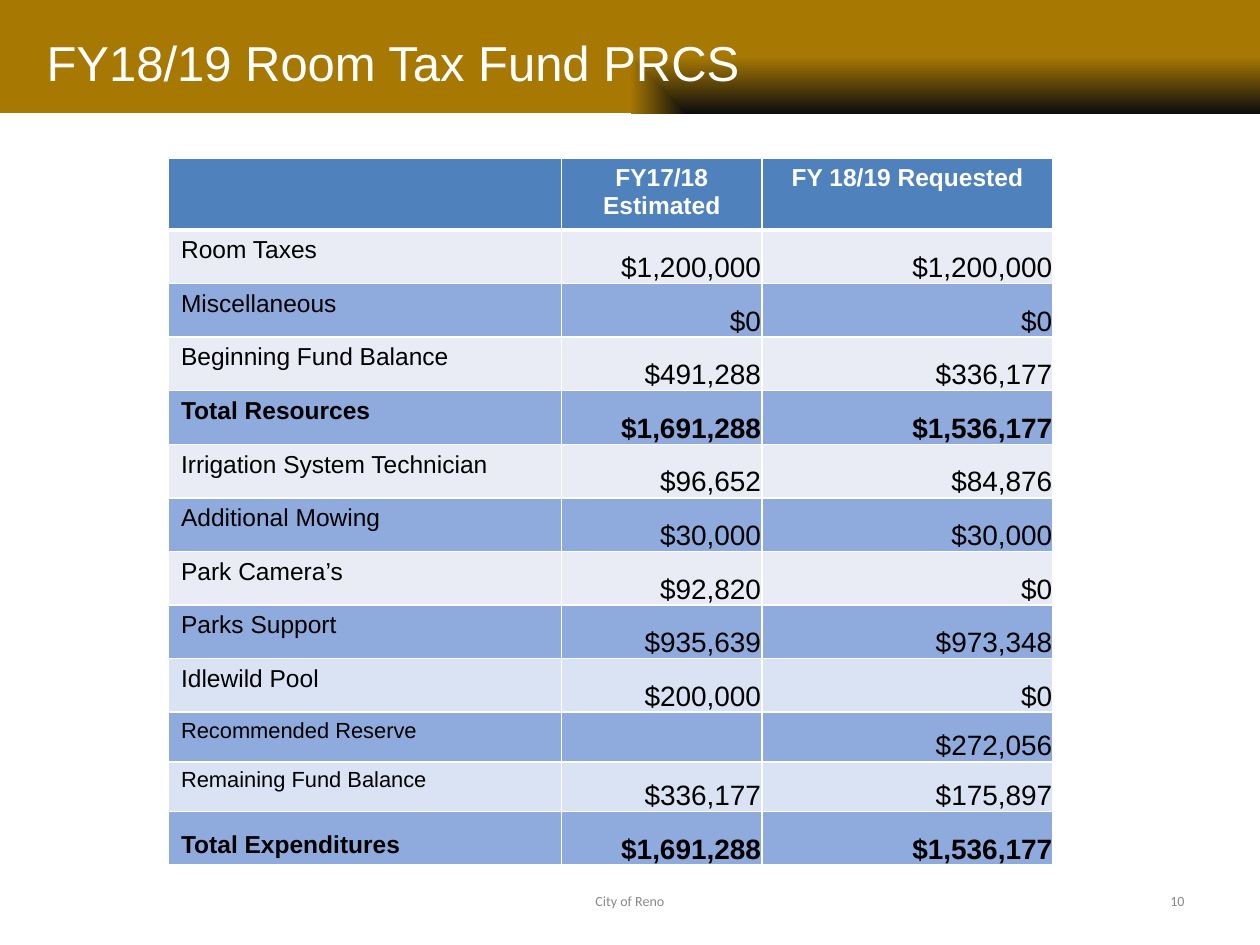
"""Build the room tax fund budget slide."""
from dataclasses import dataclass

from lxml import etree
from pptx import Presentation
from pptx import util as u
from pptx.dml.color import RGBColor
from pptx.enum import shapes, text
from pptx.oxml import parse_xml
from pptx.oxml.ns import nsdecls, qn

COLORS = {
    "white": "FFFFFF", "black": "000000", "grey": "898989",
    "gold": "A77903", "near_black": "0C0C0C", "header": "4F81BD",
    "pale": "E9ECF4", "blue": "8FAADC", "light": "DAE3F3",
}
HEADINGS = ("", "FY17/18 Estimated", "FY 18/19 Requested")
COLUMN_WIDTHS = (7.92, 4.04, 5.87)
HEADER_HEIGHT = 1.17
LABEL_MARGINS = (0.25, 0.13, 0.25, 0.13)
AMOUNT_MARGINS = (0.02, 0.02, 0.02, 0)


@dataclass
class BudgetRow:
    """One line of the budget table."""
    label: str
    estimated: str
    requested: str
    fill: str
    bold: bool = False
    size: float = 14
    height: float = 1.08
    anchor: text.MSO_ANCHOR = text.MSO_ANCHOR.TOP


BUDGET = (
    BudgetRow("Room Taxes", "$1,200,000", "$1,200,000", "pale"),
    BudgetRow("Miscellaneous", "$0", "$0", "blue"),
    BudgetRow("Beginning Fund Balance", "$491,288", "$336,177", "pale"),
    BudgetRow("Total Resources", "$1,691,288", "$1,536,177", "blue", bold=True),
    BudgetRow("Irrigation System Technician", "$96,652", "$84,876", "pale"),
    BudgetRow("Additional Mowing", "$30,000", "$30,000", "blue"),
    BudgetRow("Park Camera’s", "$92,820", "$0", "pale"),
    BudgetRow("Parks Support", "$935,639", "$973,348", "blue"),
    BudgetRow("Idlewild Pool", "$200,000", "$0", "light"),
    BudgetRow("Recommended Reserve", "", "$272,056", "blue", size=12.5, height=1),
    BudgetRow("Remaining Fund Balance", "$336,177", "$175,897", "light", size=12.5, height=1),
    BudgetRow("Total Expenditures", "$1,691,288", "$1,536,177", "blue", bold=True,
              anchor=text.MSO_ANCHOR.BOTTOM),
)


def write(frame, content: str, *, size: float, color: str = "black", font: str = "Arial",
          bold: bool = False, align=text.PP_ALIGN.LEFT) -> None:
    """Write one formatted paragraph into a text frame."""
    paragraph = frame.paragraphs[0]
    paragraph.alignment = align
    if content:
        run = paragraph.add_run()
        run.text = content
        run.font.size = u.Pt(size)
        run.font.name = font
        run.font.bold = bold
        run.font.color.rgb = RGBColor.from_string(COLORS[color])


def add_label(slide, box: tuple, content: str, **style) -> None:
    """Add a vertically centred text box."""
    frame = slide.shapes.add_textbox(*map(u.Cm, box)).text_frame
    frame.word_wrap = True
    frame.vertical_anchor = text.MSO_ANCHOR.MIDDLE
    write(frame, content, **style)


def add_banner(slide, width: int) -> None:
    """Add the title band, darkening towards its lower right corner."""
    banner = slide.shapes.add_shape(shapes.MSO_SHAPE.RECTANGLE, 0, 0, width, u.Cm(2.29))
    banner.shadow.inherit = False
    banner.line.fill.background()
    gradient = parse_xml(
        f'<a:gradFill {nsdecls("a")} rotWithShape="1"><a:gsLst>'
        f'<a:gs pos="0"><a:srgbClr val="{COLORS["near_black"]}"/></a:gs>'
        f'<a:gs pos="100000"><a:srgbClr val="{COLORS["gold"]}"/></a:gs></a:gsLst>'
        '<a:path path="rect"><a:fillToRect l="100000" t="100000"/></a:path></a:gradFill>')
    banner._element.spPr.find(qn("a:prstGeom")).addnext(gradient)


def set_borders(cell, top: float, bottom: float) -> None:
    """Give a cell white borders, with widths in points."""
    properties = cell._tc.get_or_add_tcPr()
    for side, width in (("L", 1), ("R", 1), ("T", top), ("B", bottom)):
        line = etree.SubElement(properties, qn(f"a:ln{side}"), w=str(u.Pt(width)))
        fill = etree.SubElement(line, qn("a:solidFill"))
        etree.SubElement(fill, qn("a:srgbClr"), val=COLORS["white"])


def fill_cell(cell, content: str, *, fill: str, margins: tuple = LABEL_MARGINS,
              anchor=text.MSO_ANCHOR.TOP, top: float = 1, bottom: float = 1, **style) -> None:
    """Fill, frame and write one table cell."""
    set_borders(cell, top, bottom)
    cell.fill.solid()
    cell.fill.fore_color.rgb = RGBColor.from_string(COLORS[fill])
    cell.margin_left, cell.margin_top, cell.margin_right, cell.margin_bottom = map(u.Cm, margins)
    cell.vertical_anchor = anchor
    write(cell.text_frame, content, **style)


def add_budget(slide) -> None:
    """Add the budget table."""
    heights = [HEADER_HEIGHT] + [row.height for row in BUDGET]
    table = slide.shapes.add_table(
        len(heights), len(COLUMN_WIDTHS), u.Cm(3.4), u.Cm(3.19),
        u.Cm(sum(COLUMN_WIDTHS)), u.Cm(sum(heights))).table
    for column, width in zip(table.columns, COLUMN_WIDTHS):
        column.width = u.Cm(width)
    for table_row, height in zip(table.rows, heights):
        table_row.height = u.Cm(height)
    for index, heading in enumerate(HEADINGS):
        fill_cell(table.cell(0, index), heading, fill="header", bottom=3, size=14,
                  color="white", bold=True, align=text.PP_ALIGN.CENTER)
    for number, row in enumerate(BUDGET, start=1):
        top = 3 if number == 1 else 1
        fill_cell(table.cell(number, 0), row.label, fill=row.fill, top=top,
                  anchor=row.anchor, size=row.size, bold=row.bold)
        for index, amount in enumerate((row.estimated, row.requested), start=1):
            fill_cell(table.cell(number, index), amount, fill=row.fill, top=top,
                      margins=AMOUNT_MARGINS, anchor=text.MSO_ANCHOR.BOTTOM,
                      size=16, bold=row.bold, align=text.PP_ALIGN.RIGHT)


def main() -> None:
    """Build and save the presentation."""
    presentation = Presentation()
    presentation.slide_width, presentation.slide_height = u.Cm(25.4), u.Cm(19.05)
    slide = presentation.slides.add_slide(presentation.slide_layouts[6])
    add_banner(slide, presentation.slide_width)
    add_label(slide, (0.69, 0, 23.44, 2.51), "FY18/19 Room Tax Fund PRCS", size=28, color="white")
    add_budget(slide)
    footer = {"size": 8, "color": "grey", "font": "Calibri"}
    add_label(slide, (8.68, 17.66, 8.04, 1.01), "City of Reno",
              align=text.PP_ALIGN.CENTER, **footer)
    add_label(slide, (18.2, 17.66, 5.93, 1.01), "10", align=text.PP_ALIGN.RIGHT, **footer)
    presentation.save("out.pptx")


if __name__ == "__main__":
    main()
